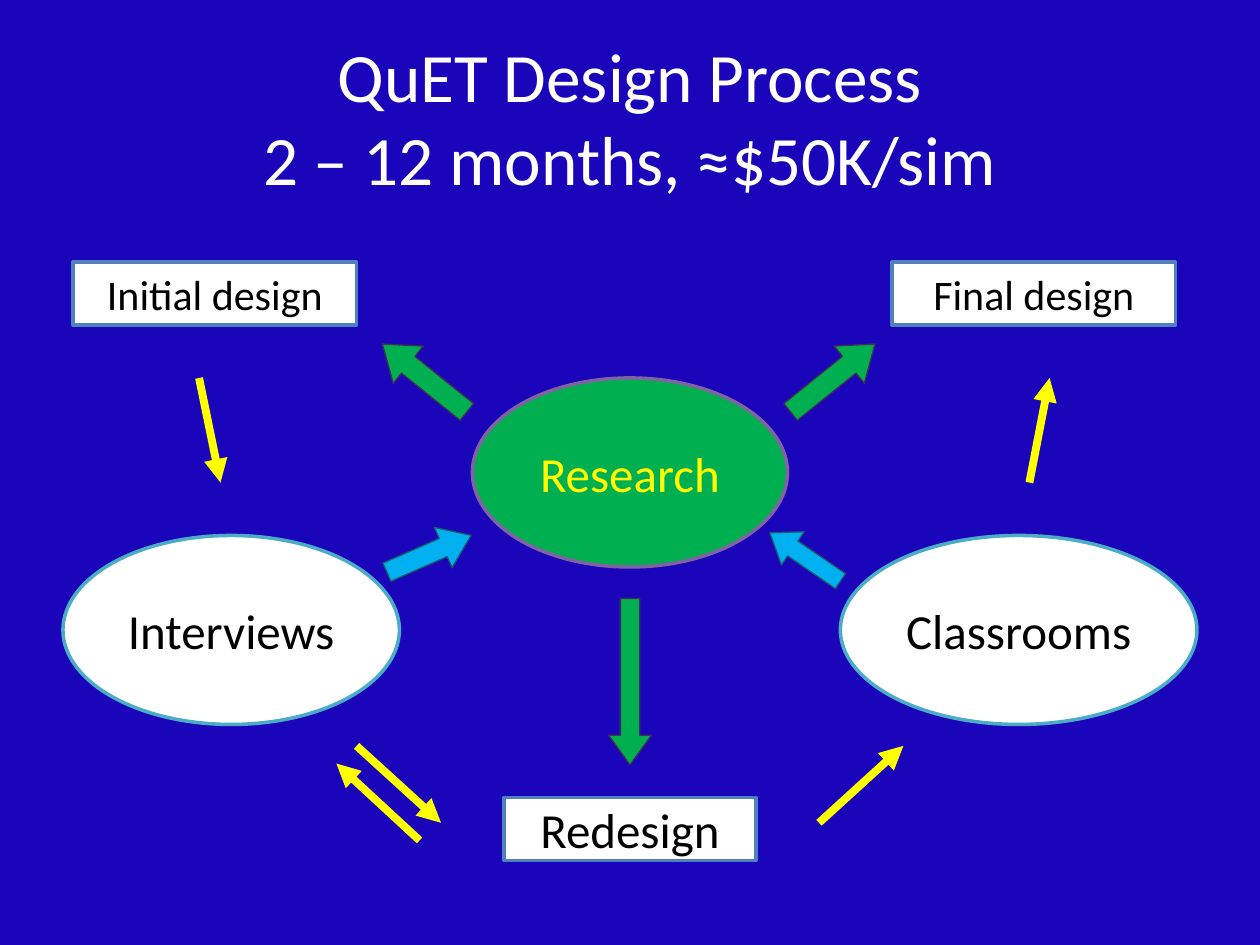
import pptx
import pptx.util
import pptx.dml.color
import pptx.enum.shapes
import pptx.enum.text
import pptx.oxml.ns
import lxml.etree

Inches, Pt = pptx.util.Inches, pptx.util.Pt
KIND = pptx.enum.shapes.MSO_SHAPE
RECT, OVAL, ARROW = KIND.RECTANGLE, KIND.OVAL, KIND.RIGHT_ARROW

TITLE = "QuET Design Process\n2 – 12 months, ≈$50K/sim"
WHITE, BLACK, YELLOW, GREEN, SKY = "FFFFFF", "000000", "FFFF00", "00B050", "00B0F0"
DARK, TEAL = "403152", "215968"

NODES = [
    ("Initial design", RECT, (0.58, 2.08, 2.25, 0.5), WHITE, "4F81BD", 24, BLACK),
    ("Interviews", OVAL, (0.5, 4.25, 2.67, 1.5), WHITE, "4BACC6", 28, BLACK),
    ("Redesign", RECT, (4, 6.33, 2, 0.5), WHITE, "4F81BD", 28, BLACK),
    ("Final design", RECT, (7.08, 2.08, 2.25, 0.5), WHITE, "4F81BD", 24, BLACK),
    ("Research", OVAL, (3.75, 3, 2.5, 1.5), GREEN, "8064A2", 28, YELLOW),
    ("Classrooms", OVAL, (6.67, 4.25, 2.83, 1.5), WHITE, "4BACC6", 28, BLACK),
]
BLOCKS = [
    ((6.18, 2.81, 0.86, 0.38), 321.2, GREEN, DARK),
    ((4.34, 5.24, 1.32, 0.34), 90, GREEN, DARK),
    ((6.05, 4.26, 0.68, 0.32), 214.4, SKY, TEAL),
    ((2.94, 2.81, 0.86, 0.38), 218.8, GREEN, DARK),
    ((3.04, 4.22, 0.73, 0.35), 336.4, SKY, TEAL),
]
STEPS = [
    (1.58, 3, 1.75, 3.83),
    (2.83, 5.92, 3.5, 6.53),
    (3.33, 6.67, 2.67, 6.06),
    (6.5, 6.53, 7.17, 5.92),
    (8.17, 3.83, 8.33, 3),
]


def paint(part, color):
    """Set a fill or font colour from a hex string."""
    if hasattr(part, "solid"):
        part.solid()
        part = part.fore_color
    else:
        part = part.color
    part.rgb = pptx.dml.color.RGBColor.from_string(color)


def write(shape, text, size, color):
    """Put centred text into a shape."""
    frame = shape.text_frame
    frame.word_wrap = True
    frame.auto_size = pptx.enum.text.MSO_AUTO_SIZE.NONE
    frame.vertical_anchor = pptx.enum.text.MSO_ANCHOR.MIDDLE
    para = frame.paragraphs[0]
    para.text = text
    para.alignment = pptx.enum.text.PP_ALIGN.CENTER
    for run in para.runs:
        run.font.name = "Calibri"
        run.font.size = Pt(size)
        paint(run.font, color)


def draw(slide, kind, box, fill, edge, width):
    """Add a filled and outlined preset shape."""
    shape = slide.shapes.add_shape(kind, *map(Inches, box))
    shape.shadow.inherit = False
    paint(shape.fill, fill)
    paint(shape.line.fill, edge)
    shape.line.width = Pt(width)
    return shape


def link(slide, ends):
    """Add a yellow line with an arrowhead at its end."""
    kind = pptx.enum.shapes.MSO_CONNECTOR.STRAIGHT
    line = slide.shapes.add_connector(kind, *map(Inches, ends))
    paint(line.line.fill, YELLOW)
    line.line.width = Pt(4.5)
    qn = pptx.oxml.ns.qn
    edge = line.line._get_or_add_ln()
    lxml.etree.SubElement(edge, qn("a:tailEnd"), type="triangle")
    lxml.etree.SubElement(line._element.spPr, qn("a:effectLst"))


def main():
    """Build the design process slide."""
    deck = pptx.Presentation()
    deck.slide_width, deck.slide_height = Inches(10), Inches(7.5)
    slide = deck.slides.add_slide(deck.slide_layouts[5])
    paint(slide.background.fill, "1B05BB")

    title = slide.shapes.title
    title.left, title.top, title.width, title.height = map(Inches, (0.5, 0.3, 9, 1.25))
    write(title, TITLE, 39.6, WHITE)

    for box, turn, fill, edge in BLOCKS:
        arrow = draw(slide, ARROW, box, fill, edge, 0.75)
        arrow.rotation = turn
        arrow.adjustments[0], arrow.adjustments[1] = 0.45, 0.69
    for text, kind, box, fill, edge, size, color in NODES:
        write(draw(slide, kind, box, fill, edge, 2), text, size, color)
    for ends in STEPS:
        link(slide, ends)

    deck.save("out.pptx")


if __name__ == "__main__":
    main()
